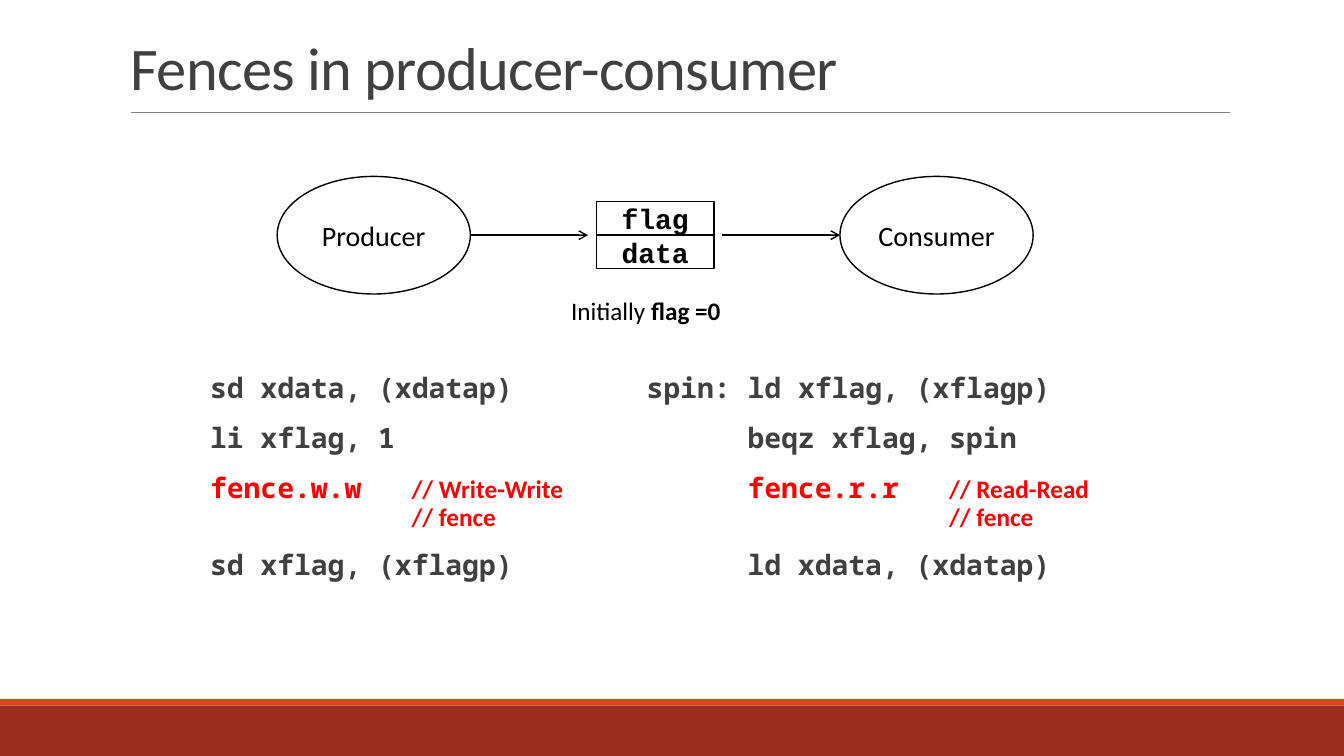
from lxml.etree import SubElement
from pptx import Presentation
from pptx.dml.color import RGBColor
from pptx.enum.shapes import MSO_CONNECTOR, MSO_SHAPE
from pptx.enum.text import MSO_ANCHOR, MSO_AUTO_SIZE, PP_ALIGN
from pptx.oxml.ns import qn
from pptx.util import Inches, Pt

COLORS = {
    "white": "FFFFFF",
    "black": "000000",
    "text": "404040",
    "fence": "FF0000",
    "rule": "808080",
    "band": "9B2D1F",
    "accent": "D34817",
}
COLUMNS, ROWS = 160, 90
CELL = Inches(1) / 12
BODY_FONT, BOX_FONT, CODE_FONT = "Calibri", "Courier New", "Noto Sans Mono"


class GridSlide:
    def __init__(self, presentation):
        self.slide = presentation.slides.add_slide(presentation.slide_layouts[6])
        self.shapes = self.slide.shapes

    def cells(self, *values):
        return [round(value * CELL) for value in values]

    def color(self, name):
        return RGBColor.from_string(COLORS[name])

    def run(self, paragraph, text, size, font=BODY_FONT, color="black", bold=False):
        run = paragraph.add_run()
        run.text = text
        run.font.size = Pt(size)
        run.font.name = font
        run.font.bold = bold
        run.font.color.rgb = self.color(color)
        return run

    def shape(self, kind, area, fill, outlined=False):
        shape = self.shapes.add_shape(kind, *self.cells(*area))
        shape.shadow.inherit = False
        shape.fill.solid()
        shape.fill.fore_color.rgb = self.color(fill)
        if outlined:
            shape.line.color.rgb = self.color("black")
            shape.line.width = Pt(1)
        else:
            shape.line.fill.background()
        return shape

    def node(self, kind, area, label, font=BODY_FONT, bold=False):
        frame = self.shape(kind, area, "white", True).text_frame
        frame.margin_left = frame.margin_right = 0
        frame.margin_top = frame.margin_bottom = 0
        frame.vertical_anchor = MSO_ANCHOR.MIDDLE
        paragraph = frame.paragraphs[0]
        paragraph.alignment = PP_ALIGN.CENTER
        self.run(paragraph, label, 20, font, bold=bold)

    def line(self, left, right, row, color="black", width=1, arrow=False):
        line = self.shapes.add_connector(
            MSO_CONNECTOR.STRAIGHT, *self.cells(left, row, right, row))
        line.line.color.rgb = self.color(color)
        line.line.width = Pt(width)
        if arrow:
            SubElement(line.line._get_or_add_ln(), qn("a:tailEnd"), type="arrow")
        SubElement(line._element.spPr, qn("a:effectLst"))

    def text_box(self, area, wrap=True):
        frame = self.shapes.add_textbox(*self.cells(*area)).text_frame
        frame.word_wrap = wrap
        return frame

    def title(self, area, text):
        frame = self.text_box(area)
        frame.vertical_anchor = MSO_ANCHOR.BOTTOM
        paragraph = frame.paragraphs[0]
        paragraph.line_spacing = 0.85
        run = self.run(paragraph, text, 43.2, color="text")
        run.font._element.set("spc", "-50")

    def caption(self, area, text, emphasis):
        frame = self.text_box(area, wrap=False)
        frame.auto_size = MSO_AUTO_SIZE.SHAPE_TO_FIT_TEXT
        self.run(frame.paragraphs[0], text, 18)
        self.run(frame.paragraphs[0], emphasis, 18, bold=True)

    def code(self, area, lines, comment_tabs):
        frame = self.text_box(area)
        frame.margin_left = frame.margin_right = 0
        for index, (code, *comments) in enumerate(lines):
            paragraph = frame.add_paragraph() if index else frame.paragraphs[0]
            paragraph.line_spacing = 0.9
            paragraph.space_before = Pt(12)
            paragraph.space_after = Pt(2)
            stops = SubElement(paragraph._element.get_or_add_pPr(), qn("a:tabLst"))
            for stop in range(1, comment_tabs + 1):
                SubElement(stops, qn("a:tab"), pos=str(Inches(stop)), algn="l")
            color = "fence" if comments else "text"
            self.run(paragraph, code, 20, CODE_FONT, color, True)
            for order, comment in enumerate(comments):
                if order:
                    paragraph.add_line_break()
                tabs = "\t" * (comment_tabs if order else 1)
                self.run(paragraph, tabs + comment, 18, color=color, bold=True)


def main():
    presentation = Presentation()
    presentation.slide_width = round(COLUMNS * CELL)
    presentation.slide_height = round(ROWS * CELL)
    grid = GridSlide(presentation)

    grid.shape(MSO_SHAPE.RECTANGLE, (0, 84, COLUMNS, 6), "band")
    grid.shape(MSO_SHAPE.RECTANGLE, (0, 83.2, COLUMNS, 0.8), "accent")
    grid.line(15.6, 146.4, 13.4, "rule", 0.5)
    grid.title((14.4, 3.7, 132, 9.1), "Fences in producer-consumer")

    grid.code((25, 44, 57, 50), [
        ("sd xdata, (xdatap)",),
        ("li xflag, 1",),
        ("fence.w.w", "// Write-Write", "// fence"),
        ("sd xflag, (xflagp)",),
    ], comment_tabs=2)
    grid.code((77, 44, 61, 50), [
        ("spin: ld xflag, (xflagp)",),
        ("\tbeqz xflag, spin",),
        ("\tfence.r.r", "// Read-Read", "// fence"),
        ("\tld xdata, (xdatap)",),
    ], comment_tabs=3)

    for row, word in ((28, "data"), (24, "flag")):
        grid.node(MSO_SHAPE.RECTANGLE, (71, row, 14, 4), word, BOX_FONT, True)
    for column, role in ((33, "Producer"), (100, "Consumer")):
        grid.node(MSO_SHAPE.OVAL, (column, 21, 23, 14), role)
    for start in (56, 86):
        grid.line(start, start + 14, 28, arrow=True)
    grid.caption((66.8, 34.6, 20.3, 4.8), "Initially ", "flag =0")

    presentation.save("out.pptx")


if __name__ == "__main__":
    main()
